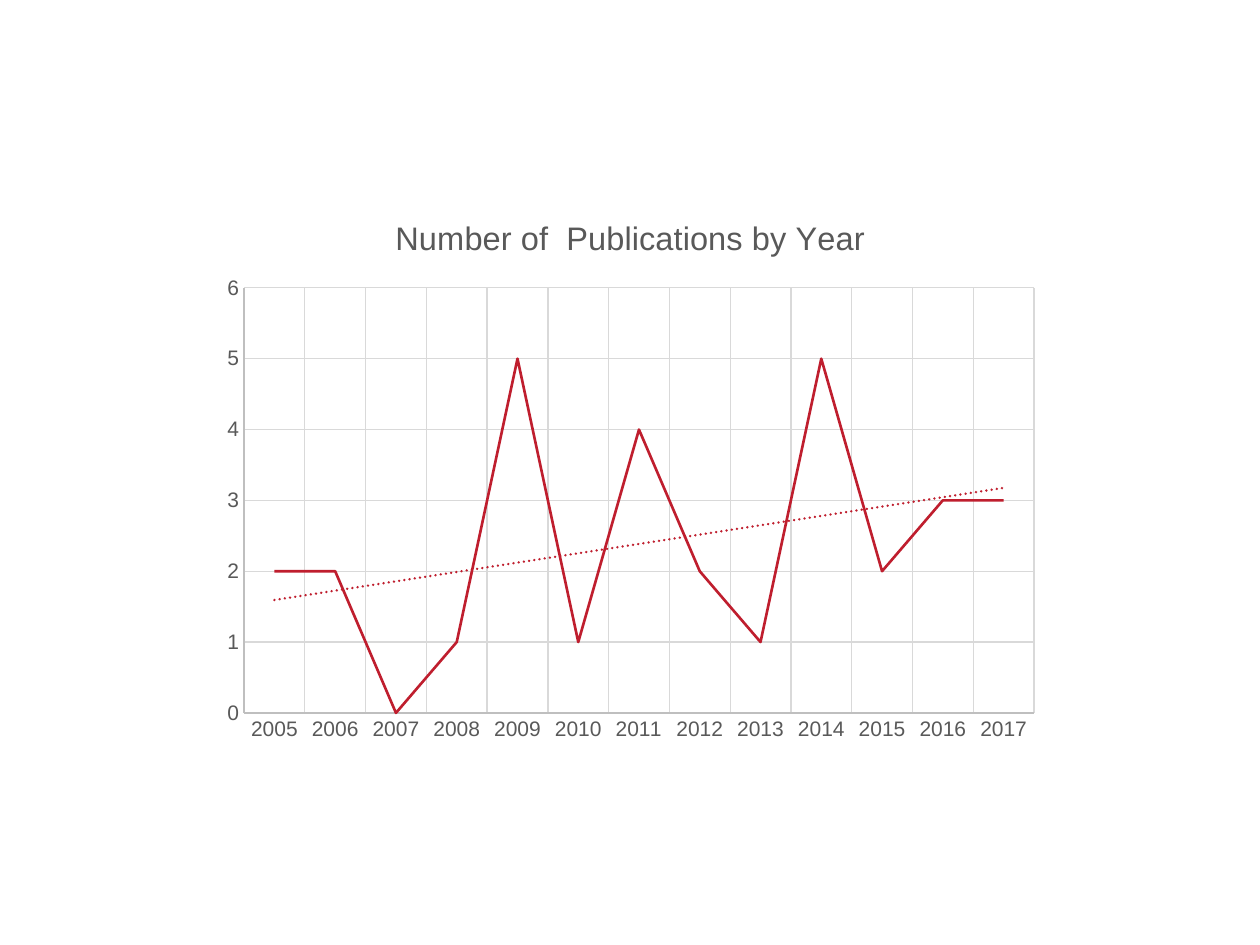
from pptx import Presentation
from pptx.chart.data import CategoryChartData
from pptx.dml.color import RGBColor
from pptx.enum.chart import XL_CHART_TYPE, XL_MARKER_STYLE, XL_TICK_MARK
from pptx.oxml import parse_xml
from pptx.oxml.ns import nsdecls, qn
from pptx.util import Inches, Pt

TITLE = "Number of  Publications by Year"
FIRST_YEAR = 2005
PUBLICATIONS = [2, 2, 0, 1, 5, 1, 4, 2, 1, 5, 2, 3, 3]
FONT = "Arial"
RED, TEXT_GRAY, AXIS_GRAY, GRID_GRAY = "BF1E2E", "595959", "BFBFBF", "D9D9D9"
PLOT_AREA = {"x": 0.04, "y": 0.17, "w": 0.94, "h": 0.76}


def color(hex_value):
    return RGBColor.from_string(hex_value)


def format_font(font, size, hex_value):
    for name, value in {"name": FONT, "size": Pt(size), "bold": False}.items():
        setattr(font, name, value)
    font.color.rgb = color(hex_value)


def format_line(line, width, hex_value):
    line.width = Pt(width)
    line.color.rgb = color(hex_value)


def format_title(chart):
    chart.has_title = True
    chart.chart_title.include_in_layout = False
    paragraph = chart.chart_title.text_frame.paragraphs[0]
    run = paragraph.add_run()
    run.text = TITLE
    format_font(run.font, 18.6, TEXT_GRAY)


def format_axis(axis):
    settings = {
        "major_tick_mark": XL_TICK_MARK.NONE,
        "minor_tick_mark": XL_TICK_MARK.NONE,
        "has_major_gridlines": True,
    }
    for name, value in settings.items():
        setattr(axis, name, value)
    format_font(axis.tick_labels.font, 12, TEXT_GRAY)
    format_line(axis.format.line, 0.75, AXIS_GRAY)
    format_line(axis.major_gridlines.format.line, 0.75, GRID_GRAY)


def add_linear_trend(series):
    trend = parse_xml(
        f'<c:trendline {nsdecls("c", "a")}><c:spPr><a:ln w="{Pt(1.5)}" cap="rnd">'
        f'<a:solidFill><a:srgbClr val="{RED}"/></a:solidFill>'
        '<a:prstDash val="sysDot"/></a:ln></c:spPr>'
        '<c:trendlineType val="linear"/><c:dispRSqr val="0"/><c:dispEq val="0"/>'
        "</c:trendline>"
    )
    series._element.find(qn("c:cat")).addprevious(trend)


def place_plot_area(chart):
    """Fix the inner plot area as fractions of the chart frame."""
    plot_area = chart._chartSpace.chart.plotArea
    for layout in plot_area.findall(qn("c:layout")):
        plot_area.remove(layout)
    modes = "".join(f'<c:{side}Mode val="edge"/>' for side in "xy")
    sizes = "".join(f'<c:{key} val="{value}"/>' for key, value in PLOT_AREA.items())
    plot_area.insert(0, parse_xml(
        f'<c:layout {nsdecls("c")}><c:manualLayout><c:layoutTarget val="inner"/>'
        f"{modes}{sizes}</c:manualLayout></c:layout>"
    ))


def add_publications_chart(slide):
    data = CategoryChartData()
    data.categories = [str(FIRST_YEAR + i) for i in range(len(PUBLICATIONS))]
    data.add_series(TITLE, PUBLICATIONS)
    chart = slide.shapes.add_chart(
        XL_CHART_TYPE.LINE, Inches(1.67), Inches(1.53), Inches(6.67), Inches(4.44), data
    ).chart
    chart.has_legend = False
    format_font(chart.font, 10, "000000")
    format_title(chart)
    for axis in (chart.category_axis, chart.value_axis):
        format_axis(axis)
    scale = {"minimum_scale": 0, "maximum_scale": 6, "major_unit": 1}
    for name, value in scale.items():
        setattr(chart.value_axis, name, value)
    plot = chart.plots[0]
    plot.vary_by_categories = False
    series = plot.series[0]
    series.smooth = False
    series.marker.style = XL_MARKER_STYLE.NONE
    format_line(series.format.line, 1.5, RED)
    add_linear_trend(series)
    place_plot_area(chart)


def main():
    presentation = Presentation()
    presentation.slide_width = Inches(10)
    presentation.slide_height = Inches(7.5)
    slide = presentation.slides.add_slide(presentation.slide_layouts[6])
    add_publications_chart(slide)
    presentation.save("out.pptx")


if __name__ == "__main__":
    main()
